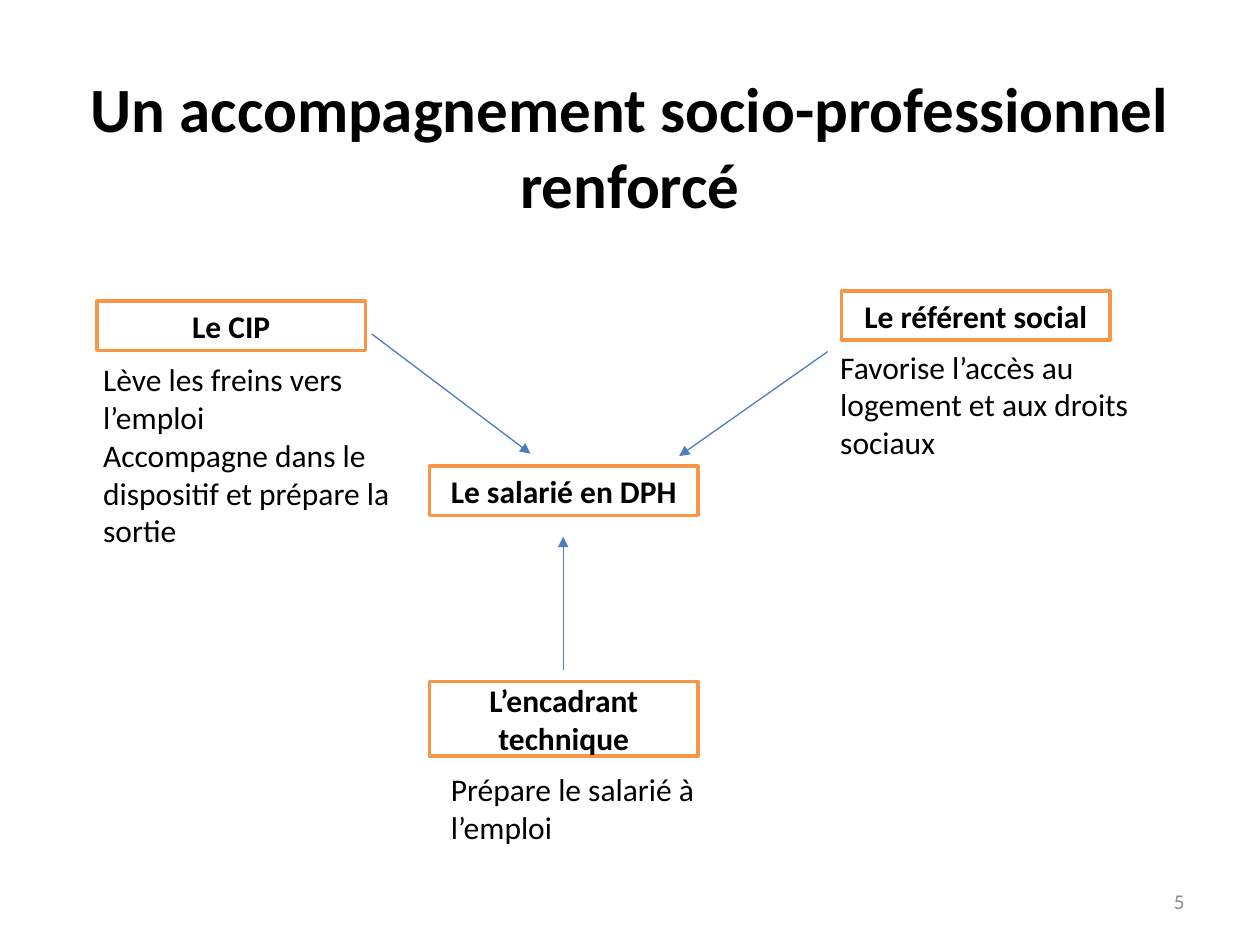
from pptx import Presentation
from pptx.dml.color import RGBColor
from pptx.enum.shapes import MSO_CONNECTOR as Connector, MSO_SHAPE as Shape
from pptx.enum.text import MSO_ANCHOR as Anchor, PP_ALIGN as Align
from pptx.oxml.ns import qn
from pptx.util import Inches, Pt
from lxml.etree import SubElement

BLACK = RGBColor(0x00, 0x00, 0x00)
WHITE = RGBColor(0xFF, 0xFF, 0xFF)
GREY = RGBColor(0x8C, 0x8C, 0x8C)
ORANGE = RGBColor(0xF7, 0x96, 0x46)
BLUE = RGBColor(0x4B, 0x7E, 0xBC)


def write_text(frame, text, size=18, color=BLACK, bold=False,
               align=Align.LEFT, anchor=Anchor.TOP, font="Calibri"):
    frame.word_wrap = True
    frame.vertical_anchor = anchor
    for index, line in enumerate(text.split("\n")):
        para = frame.paragraphs[0] if index == 0 else frame.add_paragraph()
        para.alignment = align
        span = para.add_run()
        span.text = line
        span.font.name = font
        span.font.size = Pt(size)
        span.font.bold = bold
        span.font.color.rgb = color


class Page:
    role_width = 2.13
    note_width = 2.68

    def __init__(self, deck):
        self.slide = deck.slides.add_slide(deck.slide_layouts[6])
        self.shapes = self.slide.shapes

    def text(self, left, top, width, height, text, **style):
        box = self.shapes.add_textbox(Inches(left), Inches(top), Inches(width), Inches(height))
        write_text(box.text_frame, text, **style)

    def note(self, left, top, height, text):
        self.text(left, top, self.note_width, height, text)

    def role(self, left, top, text, height=0.39):
        box = self.shapes.add_shape(Shape.RECTANGLE, Inches(left), Inches(top),
                                    Inches(self.role_width), Inches(height))
        box.shadow.inherit = False
        box.fill.solid()
        box.fill.fore_color.rgb = WHITE
        box.line.color.rgb = ORANGE
        box.line.width = Pt(2)
        write_text(box.text_frame, text, bold=True, align=Align.CENTER, anchor=Anchor.MIDDLE)

    def arrow(self, start, end):
        points = [Inches(value) for value in (*start, *end)]
        arrow = self.shapes.add_connector(Connector.STRAIGHT, *points)
        arrow.line.color.rgb = BLUE
        arrow.line.width = Pt(0.75)
        SubElement(arrow.line._get_or_add_ln(), qn("a:tailEnd"), type="triangle")
        SubElement(arrow._element.spPr, qn("a:effectLst"))


def main():
    deck = Presentation()
    deck.slide_width = Inches(10)
    deck.slide_height = Inches(7.5)
    page = Page(deck)

    page.text(0.5, 0.84, 9, 0.63, "Un accompagnement socio-professionnel renforcé",
              size=36, bold=True, align=Align.CENTER, anchor=Anchor.MIDDLE)
    page.text(7.17, 6.95, 2.33, 0.4, "5", size=12, color=GREY,
              align=Align.RIGHT, anchor=Anchor.MIDDLE)

    page.role(6.68, 2.31, "Le référent social")
    page.role(0.77, 2.39, "Le CIP")
    page.role(3.41, 3.7, "Le salarié en DPH")
    page.role(3.41, 5.41, "L’encadrant technique", height=0.59)

    page.note(3.48, 6.06, 0.71, "Prépare le salarié à l’emploi")
    page.note(6.57, 2.71, 1.01, "Favorise l’accès au logement et aux droits sociaux")
    page.note(0.72, 2.81, 1.62, "Lève les freins vers l’emploi\n"
                                "Accompagne dans le dispositif et prépare la sortie")

    page.arrow((4.47, 5.32), (4.47, 4.26))
    page.arrow((2.95, 2.65), (4.21, 3.6))
    page.arrow((6.57, 2.79), (5.39, 3.62))

    deck.save("out.pptx")


if __name__ == "__main__":
    main()
